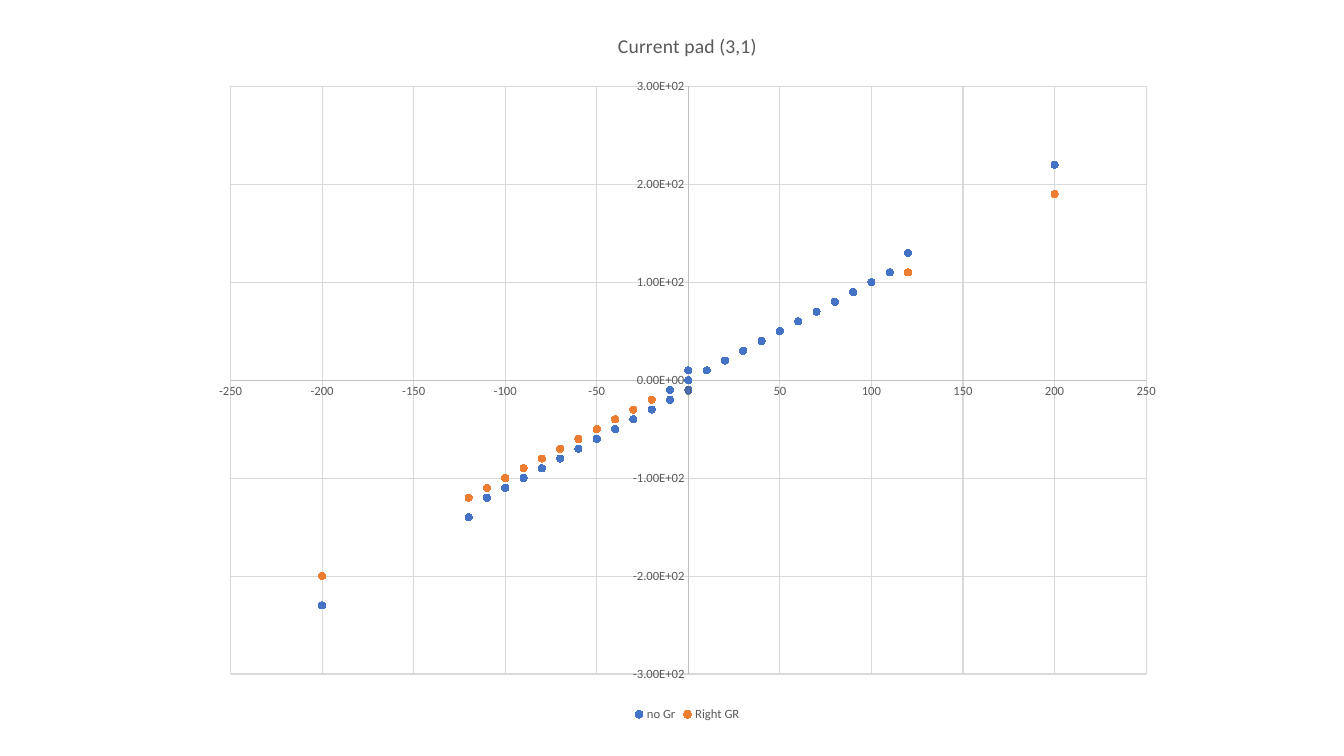
from pptx import Presentation
from pptx.chart.data import XyChartData
from pptx.dml.color import RGBColor
from pptx.enum.chart import (XL_CHART_TYPE, XL_LEGEND_POSITION, XL_MARKER_STYLE,
                             XL_TICK_LABEL_POSITION, XL_TICK_MARK)
from pptx.util import Pt

GREY_TEXT = RGBColor(0x59, 0x59, 0x59)
GREY_AXIS = RGBColor(0xBF, 0xBF, 0xBF)
GREY_GRID = RGBColor(0xD9, 0xD9, 0xD9)
BLUE = RGBColor(0x44, 0x72, 0xC4)
ORANGE = RGBColor(0xED, 0x7D, 0x31)

VOLTAGES = [-200, *range(-120, -10, 10), *[-10] * 3, *[0] * 5, *[10] * 3,
            *range(20, 130, 10), 200]
NO_GR = [-230, -140, *range(-120, -10, 10), *[-10] * 3, *[0] * 3, *[10] * 4,
         *range(20, 120, 10), 130, 220]
RIGHT_GR = [-200, *range(-120, -10, 10), *[-10] * 4, *[0] * 3, *[10] * 4,
            *range(20, 120, 10), 110, 190]
CURRENTS = [("no Gr", NO_GR, BLUE), ("Right GR", RIGHT_GR, ORANGE)]


class ScatterPage:
    """Holds the text style and the current slide, and adds a scatter chart to it."""

    def __init__(self, deck, font_name="Calibri"):
        self.page = deck.slides.add_slide(deck.slide_layouts[6])
        self.font_name = font_name

    def style_font(self, font, size):
        font.name = self.font_name
        font.size = Pt(size)
        font.bold = False
        font.color.rgb = GREY_TEXT

    def add_scatter(self, currents, left, top, width, height):
        data = XyChartData()
        for name, values, _ in currents:
            series = data.add_series(name)
            for voltage, current in zip(VOLTAGES, values, strict=True):
                series.add_data_point(voltage, current)
        chart = self.page.shapes.add_chart(
            XL_CHART_TYPE.XY_SCATTER, Pt(left), Pt(top), Pt(width), Pt(height), data).chart
        self.style_font(chart.font, 10)
        chart.plots[0].vary_by_categories = False
        for series, (_, _, color) in zip(chart.plots[0].series, currents):
            series.format.line.fill.background()
            series.marker.style = XL_MARKER_STYLE.CIRCLE
            series.marker.size = 5
            for part in (series.marker.format.fill, series.marker.format.line.fill):
                part.solid()
                part.fore_color.rgb = color
        return chart

    def style_axis(self, axis, limit, step, number_format):
        axis.minimum_scale = -limit
        axis.maximum_scale = limit
        axis.major_unit = step
        axis.major_tick_mark = axis.minor_tick_mark = XL_TICK_MARK.NONE
        axis.tick_label_position = XL_TICK_LABEL_POSITION.NEXT_TO_AXIS
        axis.tick_labels.number_format = number_format
        axis.tick_labels.number_format_is_linked = False
        self.style_font(axis.tick_labels.font, 9)
        axis.has_major_gridlines = True
        for line, color in ((axis.format.line, GREY_AXIS),
                            (axis.major_gridlines.format.line, GREY_GRID)):
            line.color.rgb = color
            line.width = Pt(0.75)

    def add_title(self, chart, text):
        chart.has_title = True
        chart.chart_title.include_in_layout = False
        para = chart.chart_title.text_frame.paragraphs[0]
        para.text = text
        self.style_font(para.runs[0].font, 14)

    def add_legend(self, chart):
        chart.has_legend = True
        chart.legend.position = XL_LEGEND_POSITION.BOTTOM
        chart.legend.include_in_layout = False
        self.style_font(chart.legend.font, 9)


def main():
    deck = Presentation()
    deck.slide_width, deck.slide_height = Pt(960), Pt(540)
    page = ScatterPage(deck)
    chart = page.add_scatter(CURRENTS, 142.56, 6.48, 696.96, 511.92)
    page.style_axis(chart.category_axis, 250, 50, "General")
    page.style_axis(chart.value_axis, 300, 100, "0.00E+00")
    page.add_title(chart, "Current pad (3,1)")
    page.add_legend(chart)
    deck.save("out.pptx")


if __name__ == "__main__":
    main()
